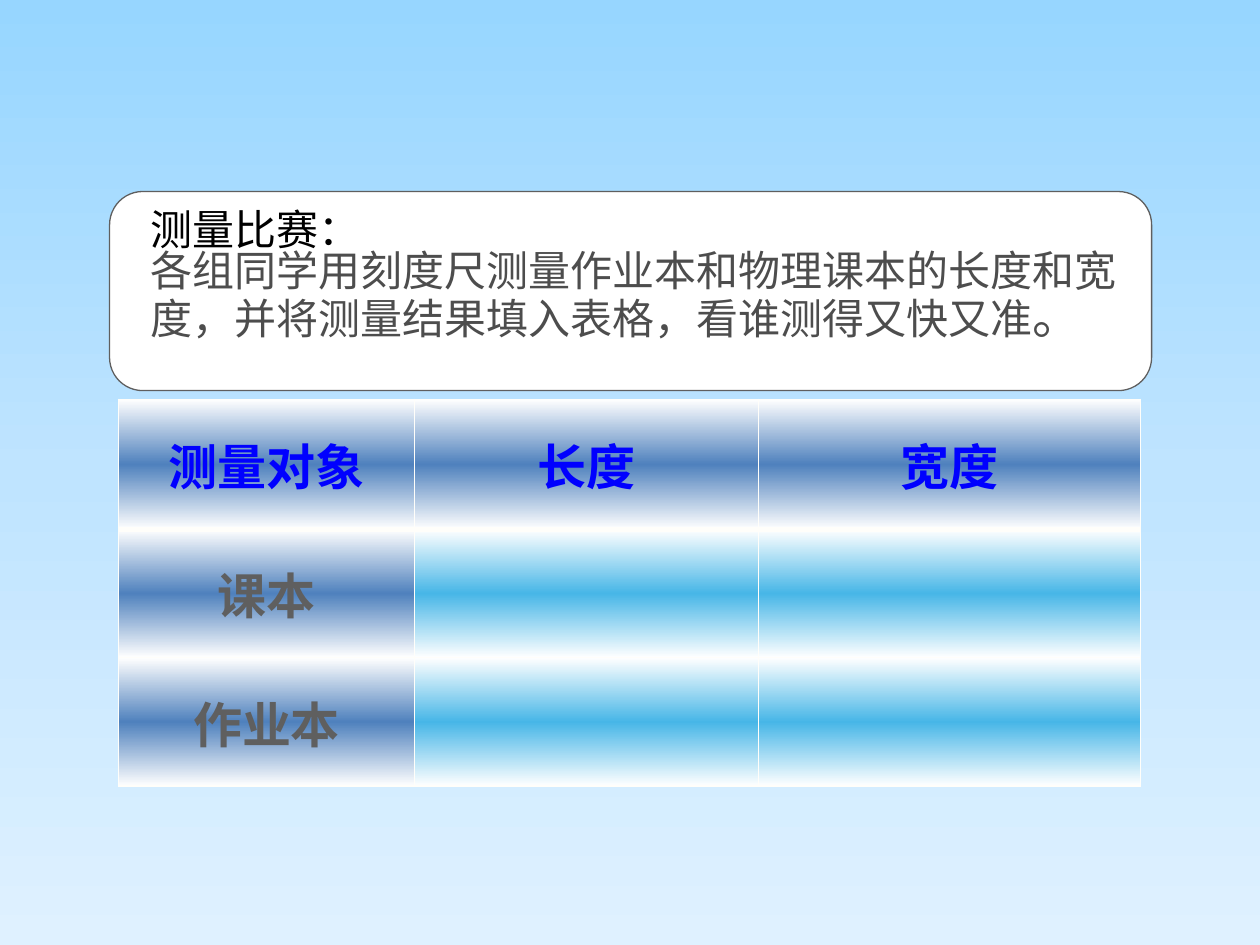
from lxml import etree
from pptx import Presentation
from pptx.dml.color import RGBColor
from pptx.enum import shapes, text
from pptx.oxml import ns
from pptx.util import Inches, Pt

FONT = "Noto Sans CJK SC"
COLORS = {
    "sky_top": "97D6FF", "sky_mid": "BFE4FF", "sky_low": "DFF1FF",
    "white": "FFFFFF", "outline": "5F5F5F", "black": "000000",
    "body": "4D4D4D", "header": "0000FF", "label_fill": "4F81BD",
    "answer_fill": "47B6E7", "border": "FFFEFA",
}
ROWS = [["测量对象", "长度", "宽度"], ["课本", "", ""], ["作业本", "", ""]]
COL_WIDTHS = [2.35, 2.73, 3.03]
ROW_HEIGHTS = [1.03, 1.02, 1.02]


def rgb(name):
    return RGBColor.from_string(COLORS[name])


def add_color(parent, name):
    etree.SubElement(parent, ns.qn("a:srgbClr"), val=COLORS[name])


def fill_gradient(fill, element, names):
    """Give a fill evenly spaced colour stops running from top to bottom."""
    fill.gradient()
    fill.gradient_angle = 270
    stops = element.find(".//" + ns.qn("a:gsLst"))
    for stop in list(stops):
        stops.remove(stop)
    for i, name in enumerate(names):
        pos = str(100000 * i // (len(names) - 1))
        add_color(etree.SubElement(stops, ns.qn("a:gs"), pos=pos), name)


def add_run(p, words, size, color, bold=False):
    r = p.add_run()
    r.text = words
    r.font.size = Pt(size)
    r.font.bold = bold
    r.font.name = FONT
    r.font.color.rgb = rgb(color)
    etree.SubElement(r.font._element, ns.qn("a:ea"), typeface=FONT)


def set_borders(cell, widths):
    """Draw the left, right, top and bottom borders, widths in points."""
    tc_pr = cell._tc.get_or_add_tcPr()
    for i, (side, width) in enumerate(zip("LRTB", widths)):
        ln = etree.Element(ns.qn("a:ln" + side), w=str(Pt(width)))
        add_color(etree.SubElement(ln, ns.qn("a:solidFill")), "border")
        tc_pr.insert(i, ln)


def add_panel(s):
    sp = s.shapes.add_shape(shapes.MSO_SHAPE.ROUNDED_RECTANGLE, Inches(0.87),
                            Inches(1.52), Inches(8.27), Inches(1.58))
    sp.shadow.inherit = False
    sp.fill.solid()
    sp.fill.fore_color.rgb = rgb("white")
    sp.line.color.rgb = rgb("outline")
    sp.line.width = Pt(0.75)


def add_task(s):
    tf = s.shapes.add_textbox(Inches(1.1), Inches(1.63),
                              Inches(8.17), Inches(1.37)).text_frame
    tf.word_wrap = True
    title, body = tf.paragraphs[0], tf.add_paragraph()
    title.line_spacing = body.line_spacing = 0.83
    add_run(title, "测量比赛：", 24, "black")
    add_run(body, "各组同学用刻度尺测量作业本和物理课本的长度和宽度，"
                  "并将测量结果填入表格，看谁测得又快又准", 24, "body")
    add_run(body, "。", 28, "body")


def fill_cell(cell, words, row, col):
    cell.margin_left = cell.margin_right = Inches(0.07)
    cell.margin_top = cell.margin_bottom = 0
    cell.vertical_anchor = text.MSO_ANCHOR.MIDDLE
    middle = "label_fill" if row == 0 or col == 0 else "answer_fill"
    fill_gradient(cell.fill, cell._tc, ["white", middle, "white"])
    set_borders(cell, [1, 1, 3 if row == 1 else 1, 3 if row == 0 else 1])
    if words:
        p = cell.text_frame.paragraphs[0]
        p.alignment = text.PP_ALIGN.CENTER
        add_run(p, words, 28, "outline" if row else "header", bold=True)


def add_results_table(s):
    table = s.shapes.add_table(len(ROWS), len(COL_WIDTHS), Inches(0.94),
                               Inches(3.17), Inches(sum(COL_WIDTHS)),
                               Inches(sum(ROW_HEIGHTS))).table
    table.horz_banding = False
    for column, width in zip(table.columns, COL_WIDTHS):
        column.width = Inches(width)
    for row, height in zip(table.rows, ROW_HEIGHTS):
        row.height = Inches(height)
    for i, row in enumerate(ROWS):
        for j, words in enumerate(row):
            fill_cell(table.cell(i, j), words, i, j)


def main():
    prs = Presentation()
    prs.slide_width, prs.slide_height = Inches(10), Inches(7.5)
    s = prs.slides.add_slide(prs.slide_layouts[6])
    fill_gradient(s.background.fill, s._element,
                  ["sky_top", "sky_mid", "sky_low"])
    add_panel(s)
    add_task(s)
    add_results_table(s)
    prs.save("out.pptx")


if __name__ == "__main__":
    main()
